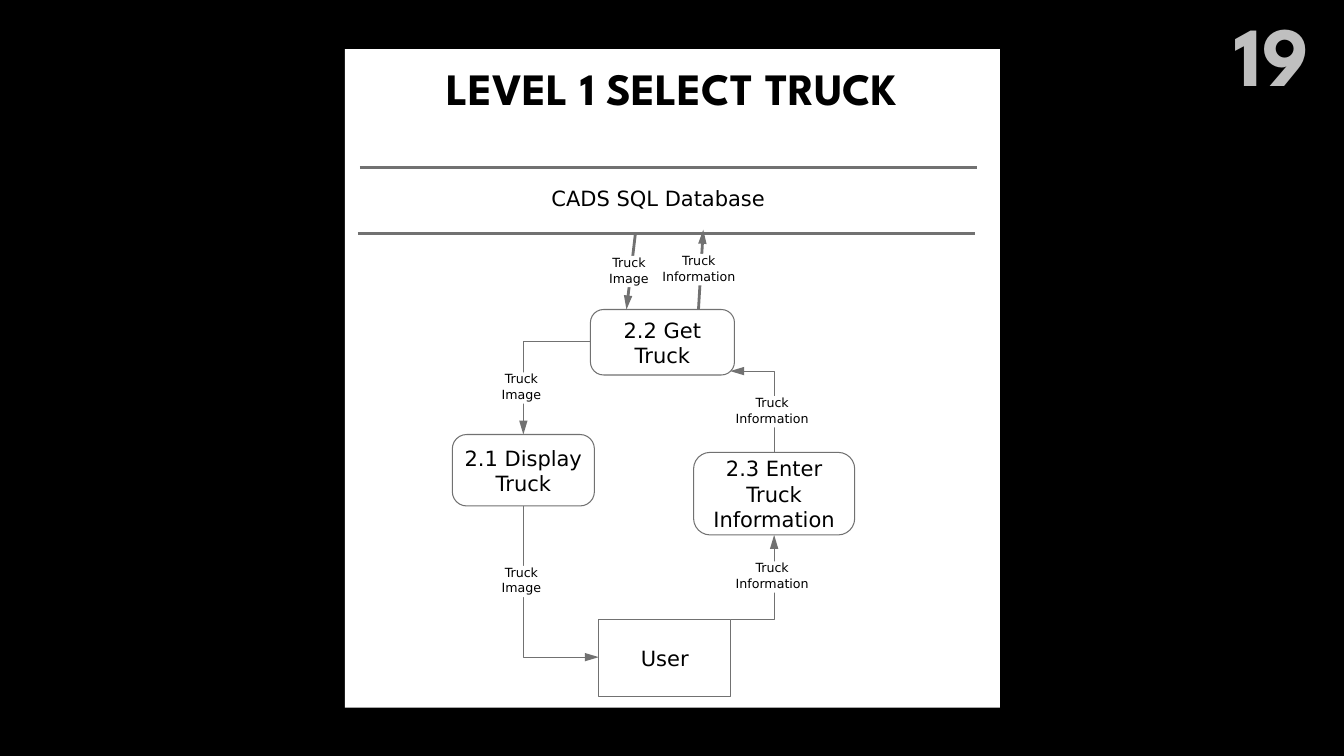
from lxml import etree
from pptx import Presentation
from pptx.dml.color import RGBColor
from pptx.enum.shapes import MSO_CONNECTOR, MSO_SHAPE
from pptx.enum.text import MSO_ANCHOR, PP_ALIGN
from pptx.oxml.ns import qn
from pptx.util import Cm, Pt

RECTANGLE = MSO_SHAPE.RECTANGLE
ROUNDED = MSO_SHAPE.ROUNDED_RECTANGLE
STRAIGHT = MSO_CONNECTOR.STRAIGHT
CENTER, RIGHT = PP_ALIGN.CENTER, PP_ALIGN.RIGHT
MIDDLE = MSO_ANCHOR.MIDDLE

BLACK = RGBColor(0x00, 0x00, 0x00)
WHITE = RGBColor(0xFF, 0xFF, 0xFF)
GRAY = RGBColor(0x71, 0x71, 0x71)
SILVER = RGBColor(0xBF, 0xBF, 0xBF)
BODY_FONT = "DejaVu Sans"
TITLE_FONT = "League Spartan"

# Content: lengths in centimetres, boxes as (left, top, width, height)
TITLE = ("LEVEL 1 SELECT TRUCK", (7.87, 0.97, 18.16, 2.46))
NUMBER = ("19", (30.33, -0.08, 2.92, 2.82))
DATABASE = ("CADS SQL Database", (12.59, 4.6, 8, 0.76))
PANEL = (8.69, 1.24, 16.51, 16.59)
STORE_LINES = [(9.07, 24.61, 4.22), (9.02, 24.56, 5.89)]  # left, right, y

PLACES = {
    "database": (9.02, 4.22, 15.54, 1.67),
    "user": (15.09, 15.6, 3.33, 1.96),
    "enter": (17.48, 11.4, 4.06, 2.08),
    "display": (11.4, 10.95, 3.58, 1.8),
    "get": (14.88, 7.8, 3.63, 1.65),
}
NODES = [
    ("user", "User", RECTANGLE),
    ("enter", "2.3 Enter\nTruck\nInformation", ROUNDED),
    ("display", "2.1 Display\nTruck", ROUNDED),
    ("get", "2.2 Get\nTruck", ROUNDED),
]
IMAGE, INFORMATION = "Truck\nImage", "Truck\nInformation"
LABEL_WIDTHS = {IMAGE: 1.04, INFORMATION: 1.93}
LABEL_HEIGHT = 0.79

# Flows: start and end as (place, share of width, share of height),
# the first leg of the route, and the label
FLOWS = [
    (("user", 1, 0), ("enter", 0.5, 1), "across", INFORMATION),
    (("enter", 0.5, 0), ("get", 0.97, 0.94), "vertical", INFORMATION),
    (("get", 0.75, 0), ("database", 0.56, 0.94), "straight", INFORMATION),
    (("database", 0.45, 1), ("get", 0.25, 0), "straight", IMAGE),
    (("get", 0, 0.49), ("display", 0.5, 0), "across", IMAGE),
    (("display", 0.5, 1), ("user", 0, 0.49), "vertical", IMAGE),
]

deck = Presentation()
deck.slide_width, deck.slide_height = Cm(33.87), Cm(19.05)
page = deck.slides.add_slide(deck.slide_layouts[6])
page.background.fill.solid()
page.background.fill.fore_color.rgb = BLACK


def write(shape, text, font=BODY_FONT, size=15, color=BLACK, bold=False,
          align=CENTER, spacing=None, insets=(0, 0, 0, 0), wrap=True):
    frame = shape.text_frame
    frame.text = text
    frame.word_wrap = wrap
    frame.vertical_anchor = MIDDLE
    (frame.margin_left, frame.margin_top,
     frame.margin_right, frame.margin_bottom) = [Cm(inset) for inset in insets]
    for para in frame.paragraphs:
        para.alignment = align
        if spacing:
            para.line_spacing = Pt(spacing)
        for span in para.runs:
            span.font.name, span.font.size = font, Pt(size)
            span.font.bold, span.font.color.rgb = bold, color


def add_text(text, place, **style):
    write(page.shapes.add_textbox(*map(Cm, place)), text, **style)


def add_box(place, kind=RECTANGLE, outlined=False):
    box = page.shapes.add_shape(kind, *map(Cm, place))
    box.shadow.inherit = False
    box.fill.solid()
    box.fill.fore_color.rgb = WHITE
    if outlined:
        box.line.color.rgb = GRAY
        box.line.width = Pt(0)
    else:
        box.line.fill.background()
    if kind == ROUNDED:
        box.adjustments[0] = 0.2
    return box


def add_route(points, arrow=False):
    points = [(Cm(x), Cm(y)) for x, y in points]
    if len(points) == 2:
        route = page.shapes.add_connector(STRAIGHT, *points[0], *points[1])
    else:
        builder = page.shapes.build_freeform(*points[0], scale=1.0)
        builder.add_line_segments(points[1:], close=False)
        route = builder.convert_to_shape()
        route.fill.background()
    route.line.color.rgb = GRAY
    route.line.width = Pt(0)
    if arrow:
        etree.SubElement(route.line._get_or_add_ln(), qn("a:tailEnd"),
                         type="triangle", w="med", len="lg")
    etree.SubElement(route._element.spPr, qn("a:effectLst"))


def anchor(name, across, down):
    left, top, width, height = PLACES[name]
    return left + across * width, top + down * height


# Panel and data store
add_box(PANEL)
for left, right, y in STORE_LINES:
    add_route([(left, y), (right, y)])
add_text(*DATABASE)

# Processes and user
for name, text, kind in NODES:
    write(add_box(PLACES[name], kind, outlined=True), text)

# Flows, each with its label halfway along the vertical leg
for source, target, first_leg, text in FLOWS:
    start, end = anchor(*source), anchor(*target)
    if first_leg == "across":
        bend = (end[0], start[1])
        points, leg = [start, bend, end], (bend, end)
    elif first_leg == "vertical":
        bend = (start[0], end[1])
        points, leg = [start, bend, end], (start, bend)
    else:
        points, leg = [start, end], (start, end)
    add_route(points, arrow=True)
    x, y = [sum(pair) / 2 for pair in zip(*leg)]
    width = LABEL_WIDTHS[text]
    label = add_box((x - width / 2, y - LABEL_HEIGHT / 2, width, LABEL_HEIGHT))
    write(label, text, size=9, spacing=11.4, insets=(0, 0, 0.1, 0.1), wrap=False)

# Title and slide number
HEADING = dict(font=TITLE_FONT, bold=True, insets=(0.25, 0.13, 0.25, 0.13))
add_text(*TITLE, size=32, **HEADING)
add_text(*NUMBER, size=60, color=SILVER, align=RIGHT, **HEADING)

deck.save("out.pptx")
